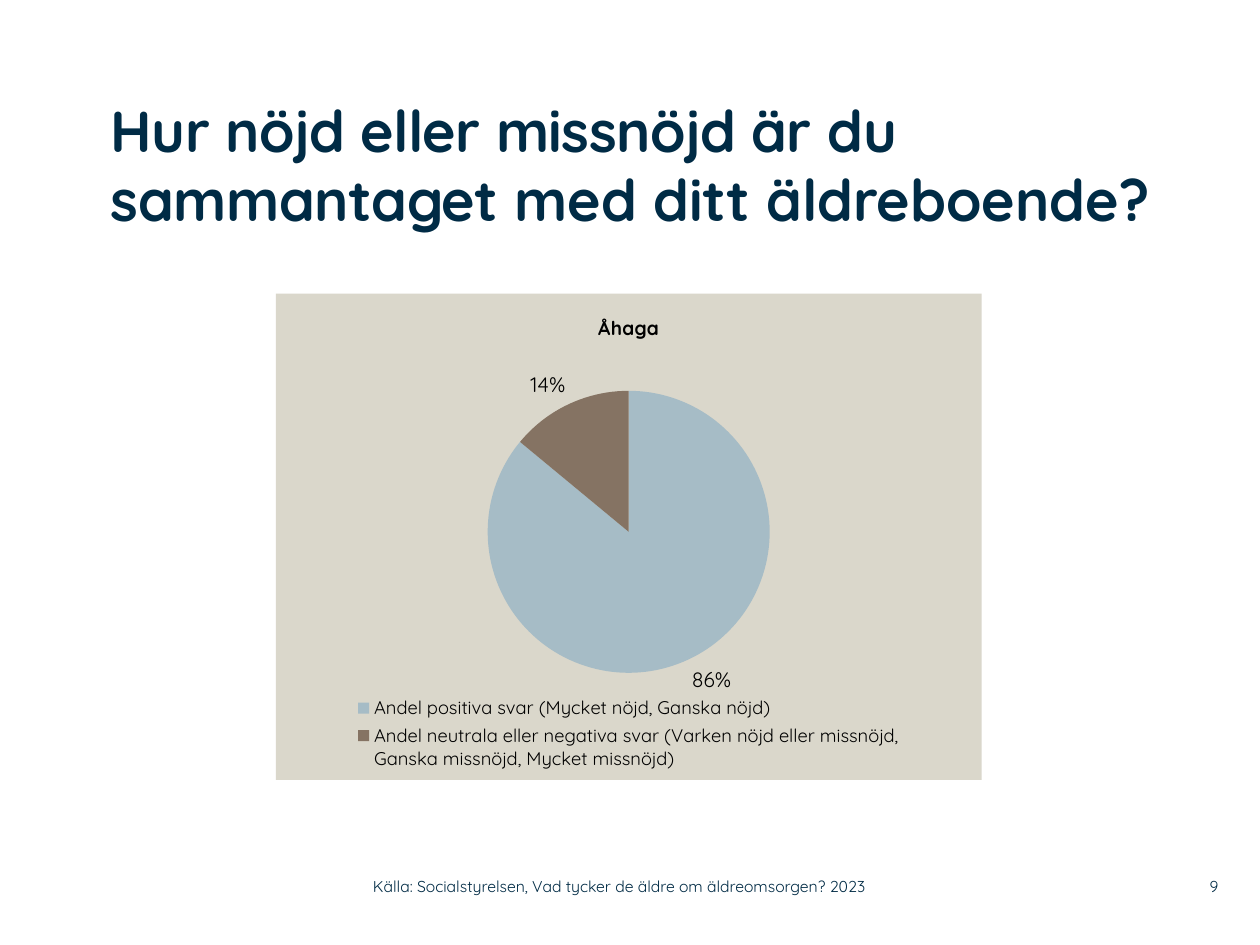
from dataclasses import dataclass

from lxml.etree import _Element
from pptx import Presentation
from pptx.chart.data import CategoryChartData
from pptx.dml.color import RGBColor
from pptx.enum.chart import XL_CHART_TYPE, XL_LABEL_POSITION, XL_LEGEND_POSITION
from pptx.enum.text import MSO_ANCHOR, MSO_AUTO_SIZE, PP_ALIGN
from pptx.oxml import parse_xml
from pptx.oxml.ns import nsdecls
from pptx.util import Inches, Pt

HUES = {"ink": "002B45", "text": "000000", "panel": "DAD7CB",
        "good": "A6BCC6", "other": "857363"}
FONT = "Quicksand"
FRAME = {"margin_left": 0, "margin_right": 0, "margin_top": 0,
         "margin_bottom": 0, "word_wrap": True,
         "auto_size": MSO_AUTO_SIZE.NONE}


@dataclass
class Note:
    text: str
    left: float
    width: float
    align: PP_ALIGN


@dataclass
class Slice:
    label: str
    value: int
    hue: str


NOTES = [
    Note("9", 9.2, 0.47, PP_ALIGN.RIGHT),
    Note("Källa: Socialstyrelsen, Vad tycker de äldre om äldreomsorgen? 2023",
         2.96, 4.43, PP_ALIGN.LEFT),
]
SLICES = [
    Slice("Andel positiva svar (Mycket nöjd, Ganska nöjd)", 86, "good"),
    Slice("Andel neutrala eller negativa svar (Varken nöjd eller missnöjd, "
          "Ganska missnöjd, Mycket missnöjd)", 14, "other"),
]


def apply(item, values: dict) -> None:
    for name, value in values.items():
        setattr(item, name, value)


def style(font, size: float, hue: str, bold: bool = False) -> None:
    apply(font, {"name": FONT, "size": Pt(size), "bold": bold})
    font.color.rgb = RGBColor.from_string(HUES[hue])


def layout(x: float, y: float, w: float, h: float, inner: bool) -> _Element:
    """Manual chart layout, in fractions of the chart area."""
    target = '<c:layoutTarget val="inner"/>' if inner else ""
    sizes = "".join(f'<c:{tag} val="{val}"/>'
                    for tag, val in zip("xywh", (x, y, w, h)))
    return parse_xml(
        f'<c:layout {nsdecls("c")}><c:manualLayout>{target}'
        f'<c:xMode val="edge"/><c:yMode val="edge"/>{sizes}'
        '</c:manualLayout></c:layout>')


def add_title(slide) -> None:
    title = slide.shapes.title
    apply(title, {"left": Inches(0.88), "top": Inches(0.75),
                  "width": Inches(8.83), "height": Inches(1.42)})
    frame = title.text_frame
    apply(frame, FRAME | {"vertical_anchor": MSO_ANCHOR.TOP})
    para = frame.paragraphs[0]
    para.alignment = PP_ALIGN.LEFT
    parts = {"Hur nöjd eller missnöjd är du sammantaget ": -30,
             "med ditt äldreboende?": 0}
    for text, gap in parts.items():
        run = para.add_run()
        run.text = text
        style(run.font, 33, "ink", True)
        run.font._element.set("spc", str(gap))


def add_note(slide, note: Note) -> None:
    box = slide.shapes.add_textbox(Inches(note.left), Inches(6.89),
                                   Inches(note.width), Inches(0.29))
    frame = box.text_frame
    apply(frame, FRAME | {"vertical_anchor": MSO_ANCHOR.MIDDLE})
    para = frame.paragraphs[0]
    apply(para, {"text": note.text, "alignment": note.align})
    style(para.font, 9, "ink")
    style(para.runs[0].font, 9, "ink")


def add_pie(slide) -> None:
    data = CategoryChartData()
    data.categories = [part.label for part in SLICES]
    data.add_series("Åhaga", [part.value for part in SLICES])
    chart = slide.shapes.add_chart(
        XL_CHART_TYPE.PIE, Inches(2.19), Inches(2.33),
        Inches(5.6), Inches(3.86), data).chart
    style(chart.font, 18, "text")

    # Heading and legend
    chart.has_title = True
    head = chart.chart_title.text_frame
    head.text = "Åhaga"
    style(head.paragraphs[0].runs[0].font, 11, "text", True)
    chart.has_legend = True
    legend = chart.legend
    apply(legend, {"position": XL_LEGEND_POSITION.BOTTOM,
                   "include_in_layout": False})
    style(legend.font, 10.5, "text")

    # Slices and their labels
    plot = chart.plots[0]
    plot.vary_by_categories = True
    series = plot.series[0]
    for index, part in enumerate(SLICES):
        fill = series.points[index].format.fill
        fill.solid()
        fill.fore_color.rgb = RGBColor.from_string(HUES[part.hue])
    labels = series.data_labels
    apply(labels, {"show_percentage": True, "show_value": False,
                   "number_format": "0%", "number_format_is_linked": False,
                   "position": XL_LABEL_POSITION.OUTSIDE_END})
    style(labels.font, 12, "text")

    # Panel fill, pie place and legend place
    root = chart._chartSpace
    root.chart.addnext(parse_xml(
        f'<c:spPr {nsdecls("c", "a")}><a:solidFill>'
        f'<a:srgbClr val="{HUES["panel"]}"/></a:solidFill>'
        '<a:ln><a:noFill/></a:ln></c:spPr>'))
    area = root.chart.plotArea
    for old in area.findall("{*}layout"):
        area.remove(old)
    area.insert(0, layout(0.3, 0.2, 0.4, 0.58, True))
    key = legend._element
    for old in key.findall("{*}layout"):
        key.remove(old)
    key.find("{*}legendPos").addnext(layout(0.1, 0.82, 0.8, 0.17, False))


def main() -> None:
    deck = Presentation()
    apply(deck, {"slide_width": Inches(10), "slide_height": Inches(7.5)})
    slide = deck.slides.add_slide(deck.slide_layouts[5])
    for note in NOTES:
        add_note(slide, note)
    add_title(slide)
    add_pie(slide)
    deck.save("out.pptx")


if __name__ == "__main__":
    main()
